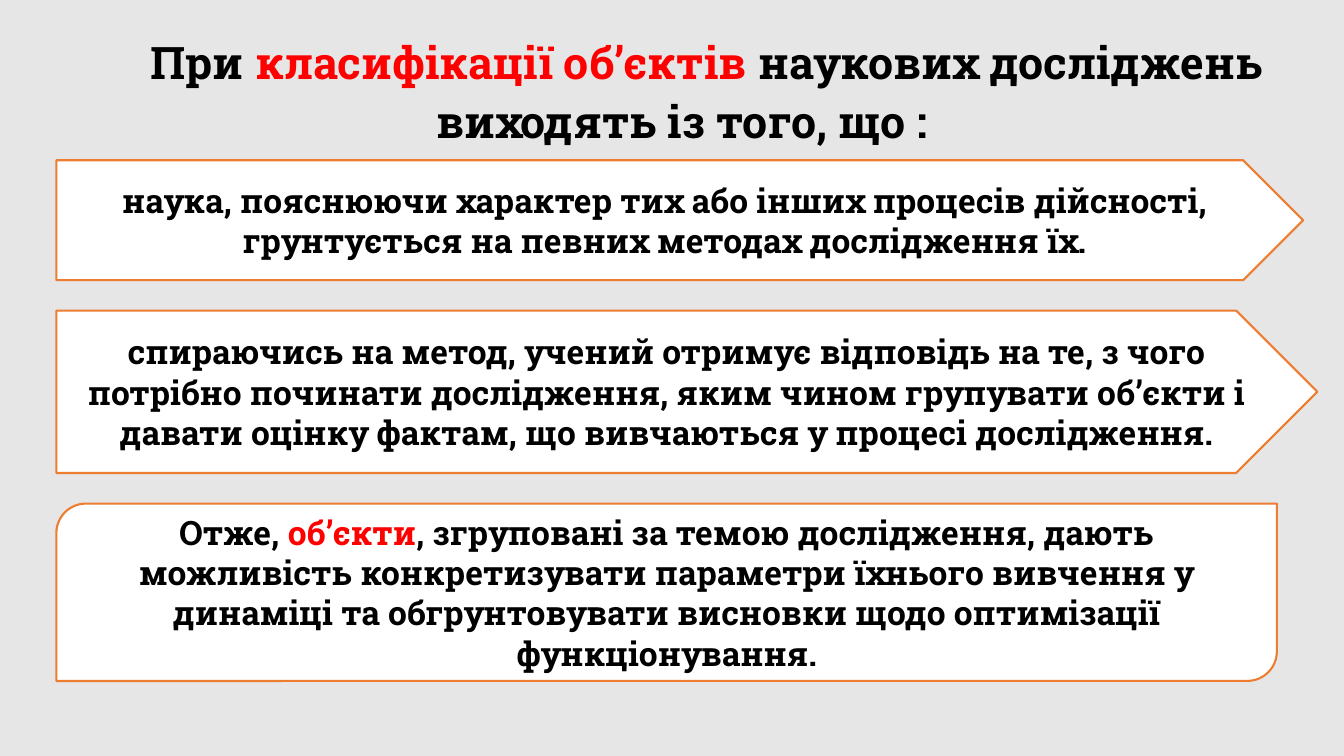
import dataclasses

import pptx
import pptx.dml.color
import pptx.enum.shapes
import pptx.enum.text
import pptx.util

Cm, Pt = pptx.util.Cm, pptx.util.Pt
RGB = pptx.dml.color.RGBColor.from_string
SHAPE = pptx.enum.shapes.MSO_SHAPE


@dataclasses.dataclass(frozen=True)
class Theme:
    font: str = "Roboto Slab"
    title_size: int = 32
    body_size: int = 24
    background: str = "E7E6E6"
    panel: str = "FFFFFF"
    border: str = "ED7D31"
    text: str = "000000"
    accent: str = "FF0000"


theme = Theme()


def write(tf, parts, size):
    """Fill one centred bold paragraph; every second part takes the accent colour."""
    tf.word_wrap = True
    p = tf.paragraphs[0]
    p.alignment = pptx.enum.text.PP_ALIGN.CENTER
    p.font.name, p.font.size, p.font.bold = theme.font, Pt(size), True
    for i, part in enumerate(parts):
        r = p.add_run()
        r.text = part
        r.font.color.rgb = RGB(theme.accent if i % 2 else theme.text)
    return p


prs = pptx.Presentation()
prs.slide_width, prs.slide_height = Cm(33.87), Cm(19.05)
s = prs.slides.add_slide(prs.slide_layouts[6])
s.background.fill.solid()
s.background.fill.fore_color.rgb = RGB(theme.background)

title = s.shapes.add_textbox(Cm(0.94), Cm(0.61), Cm(32.49), Cm(3.43))
p = write(
    title.text_frame,
    ["\tПри ", "класифікації об’єктів ", "наукових досліджень виходять із того, що :"],
    theme.title_size,
)
p.line_spacing = 1.1
p.space_before = Pt(10)

# Shape, width and height in cm, text parts
panels = [
    (SHAPE.PENTAGON, 31.42, 3.02, [
        "наука, пояснюючи характер тих або інших процесів дійсності, "
        "грунтується на певних методах дослідження їх.",
    ]),
    (SHAPE.PENTAGON, 31.78, 4.09, [
        "спираючись на метод, учений отримує відповідь на те, з чого потрібно "
        "починати дослідження, яким чином групувати об’єкти і давати оцінку "
        "фактам, що вивчаються у процесі дослідження.",
    ]),
    (SHAPE.ROUND_2_DIAG_RECTANGLE, 30.76, 4.47, [
        "Отже, ",
        "об’єкти",
        ", згруповані за темою дослідження, дають можливість конкретизувати "
        "параметри їхнього вивчення у динаміці та обгрунтовувати висновки "
        "щодо оптимізації функціонування.",
    ]),
]
left, top, gap = 1.42, 4.04, 0.77
for kind, width, height, parts in panels:
    sp = s.shapes.add_shape(kind, Cm(left), Cm(top), Cm(width), Cm(height))
    sp.shadow.inherit = False
    sp.fill.solid()
    sp.fill.fore_color.rgb = RGB(theme.panel)
    sp.line.color.rgb = RGB(theme.border)
    sp.line.width = Pt(1.5)
    sp.text_frame.vertical_anchor = pptx.enum.text.MSO_ANCHOR.MIDDLE
    write(sp.text_frame, parts, theme.body_size)
    top += height + gap

prs.save("out.pptx")
